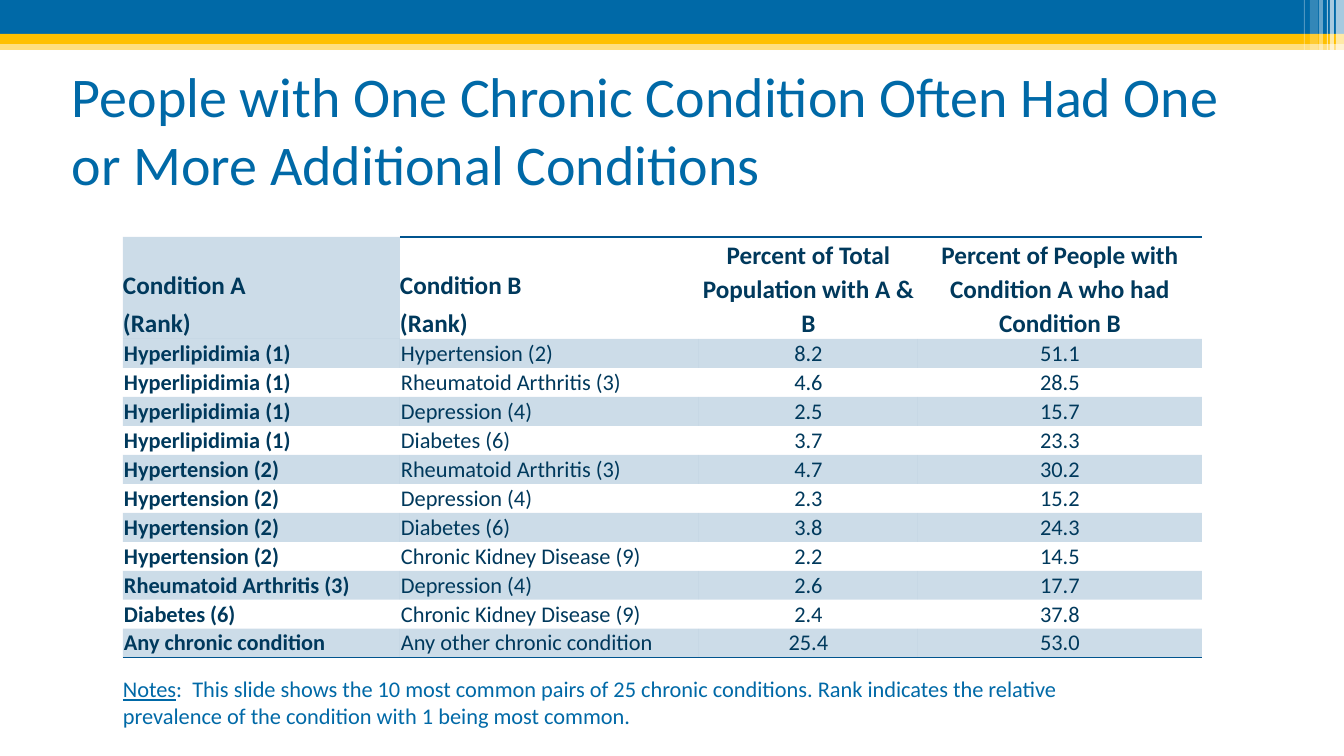
from typing import Any, NamedTuple

from lxml import etree
from pptx import Presentation
from pptx.dml.color import RGBColor
from pptx.enum.shapes import MSO_SHAPE
from pptx.enum.text import MSO_ANCHOR, PP_ALIGN
from pptx.oxml.ns import qn
from pptx.util import Emu, Pt

RECT = MSO_SHAPE.RECTANGLE
LEFT, CENTER = PP_ALIGN.LEFT, PP_ALIGN.CENTER
TOP, MIDDLE, BOTTOM = MSO_ANCHOR.TOP, MSO_ANCHOR.MIDDLE, MSO_ANCHOR.BOTTOM

SCALE = 914400 / 100.8
WIDE, HIGH = 1344, 756
FONT = "Calibri"
PLAIN = "{2D5ABB26-0587-4C30-8999-92F81FD0307C}"
COLORS = {
    "blue": "0069A7",
    "gold": "FFC000",
    "white": "FFFFFF",
    "navy": "00395C",
    "rule": "00548E",
}


class Band(NamedTuple):
    left: int
    top: int
    width: int
    height: int
    color: str
    alpha: int = 100


class Style(NamedTuple):
    size: int
    color: str
    bold: bool = False
    underline: bool = False


BANDS = [
    Band(0, 40, WIDE, 10, "gold", 50),
    Band(0, 0, WIDE, 34, "blue"),
    Band(0, 34, WIDE, 10, "gold"),
    Band(1336, 0, 8, 69, "white", 65),
    Band(1330, 0, 4, 69, "white", 65),
    Band(1327, 0, 1, 69, "white", 60),
    Band(1319, 0, 4, 69, "white", 40),
    Band(1310, 0, 8, 65, "white", 20),
    Band(1304, 0, 1, 65, "white", 30),
]

TITLE = Style(40, "blue")
NOTE = Style(16, "blue")
HEAD = Style(18, "navy", bold=True)
NAME = Style(16, "navy", bold=True)
BODY = Style(16, "navy")

COLS = [277, 299, 219, 284]
HEAD_ROW, BODY_ROW = 102, 29
HEADS = [
    ["Condition A", "(Rank)"],
    ["Condition B", "(Rank)"],
    ["Percent of Total Population with A & B"],
    ["Percent of People with Condition A who had Condition B"],
]
PAIRS = [
    ("Hyperlipidimia (1)", "Hypertension (2)", "8.2", "51.1"),
    ("Hyperlipidimia (1)", "Rheumatoid Arthritis (3)", "4.6", "28.5"),
    ("Hyperlipidimia (1)", "Depression (4)", "2.5", "15.7"),
    ("Hyperlipidimia (1)", "Diabetes (6)", "3.7", "23.3"),
    ("Hypertension (2)", "Rheumatoid Arthritis (3)", "4.7", "30.2"),
    ("Hypertension (2)", "Depression (4)", "2.3", "15.2"),
    ("Hypertension (2)", "Diabetes (6)", "3.8", "24.3"),
    ("Hypertension (2)", "Chronic Kidney Disease (9)", "2.2", "14.5"),
    ("Rheumatoid Arthritis (3)", "Depression (4)", "2.6", "17.7"),
    ("Diabetes (6)", "Chronic Kidney Disease (9)", "2.4", "37.8"),
    ("Any chronic condition", "Any other chronic condition", "25.4", "53.0"),
]


def px(count: int) -> Emu:
    return Emu(round(count * SCALE))


def rgb(name: str) -> RGBColor:
    return RGBColor.from_string(COLORS[name])


def apply(target: Any, values: dict[str, Any]) -> None:
    """Set each named attribute on the target."""
    for key, value in values.items():
        setattr(target, key, value)


def paint(item: Any, node: Any, color: str, alpha: int = 100) -> None:
    """Fill a shape or cell; node is the XML that holds its fill."""
    item.fill.solid()
    item.fill.fore_color.rgb = rgb(color)
    if alpha < 100:
        tint = node.find(qn("a:solidFill")).find(qn("a:srgbClr"))
        etree.SubElement(tint, qn("a:alpha"), val=str(alpha * 1000))


def write(para: Any, text: str, style: Style) -> None:
    run = para.add_run()
    run.text = text
    apply(run.font, {"name": FONT, "size": Pt(style.size),
                     "bold": style.bold, "underline": style.underline})
    run.font.color.rgb = rgb(style.color)


def margins(size: int) -> dict[str, Emu]:
    sides = ("left", "top", "right", "bottom")
    return {f"margin_{side}": px(size) for side in sides}


def add_band(slide: Any, band: Band) -> None:
    shape = slide.shapes.add_shape(RECT, *map(px, band[:4]))
    shape.shadow.inherit = False
    shape.line.fill.background()
    paint(shape, shape._element.spPr, band.color, band.alpha)


def add_text(slide: Any, box: tuple[int, int, int, int], anchor: Any,
             runs: list[tuple[str, Style]]) -> None:
    frame = slide.shapes.add_textbox(*map(px, box)).text_frame
    apply(frame, {"word_wrap": True, "vertical_anchor": anchor, **margins(5)})
    for text, style in runs:
        write(frame.paragraphs[0], text, style)


def add_rule(cell: Any, side: str) -> None:
    """Draw a border on one side of a cell: lnT or lnB."""
    line = etree.Element(qn(f"a:{side}"), w=str(Pt(1)))
    fill = etree.SubElement(line, qn("a:solidFill"))
    etree.SubElement(fill, qn("a:srgbClr"), val=COLORS["rule"])
    cell._tc.get_or_add_tcPr().insert(0, line)


def fill_cell(cell: Any, lines: list[str], style: Style, align: Any,
              inset: int, spacing: float, shaded: bool) -> None:
    apply(cell, {"vertical_anchor": BOTTOM, **margins(inset)})
    frame = cell.text_frame
    for index, text in enumerate(lines):
        para = frame.add_paragraph() if index else frame.paragraphs[0]
        apply(para, {"alignment": align, "line_spacing": spacing,
                     "space_before": Pt(3 if index else 0)})
        write(para, text, style)
    if shaded:
        paint(cell, cell._tc.get_or_add_tcPr(), "rule", 20)
    else:
        cell.fill.background()


def add_pairs(slide: Any) -> None:
    count = len(PAIRS)
    box = (123, 237, sum(COLS), HEAD_ROW + count * BODY_ROW)
    table = slide.shapes.add_table(
        count + 1, len(COLS), *map(px, box)).table
    apply(table, {"first_row": False, "horz_banding": False})
    table._tbl.tblPr.find(qn("a:tableStyleId")).text = PLAIN
    for row in table.rows:
        row.height = px(BODY_ROW)
    table.rows[0].height = px(HEAD_ROW)
    for col, width in enumerate(COLS):
        table.columns[col].width = px(width)
        align = LEFT if col < 2 else CENTER
        head = table.cell(0, col)
        fill_cell(head, HEADS[col], HEAD, align, 0, 1.1, col == 0)
        if col:
            add_rule(head, "lnT")
        style = BODY if col else NAME
        for row, pair in enumerate(PAIRS, 1):
            fill_cell(table.cell(row, col), [pair[col]], style, align,
                      1, 1.0, row % 2 == 1)
        add_rule(table.cell(count, col), "lnB")


def main() -> None:
    deck = Presentation()
    apply(deck, {"slide_width": px(WIDE), "slide_height": px(HIGH)})
    slide = deck.slides.add_slide(deck.slide_layouts[6])
    for band in BANDS:
        add_band(slide, band)
    add_text(slide, (67, 70, 1210, 118), MIDDLE, [
        ("People with One Chronic Condition Often Had One "
         "or More Additional Conditions", TITLE)])
    add_pairs(slide)
    add_text(slide, (118, 670, 1021, 62), TOP, [
        ("Notes", NOTE._replace(underline=True)),
        (":  This slide shows the 10 most common pairs of 25 chronic "
         "conditions. Rank indicates the relative prevalence of the "
         "condition with 1 being most common.", NOTE)])
    deck.save("out.pptx")


if __name__ == "__main__":
    main()
